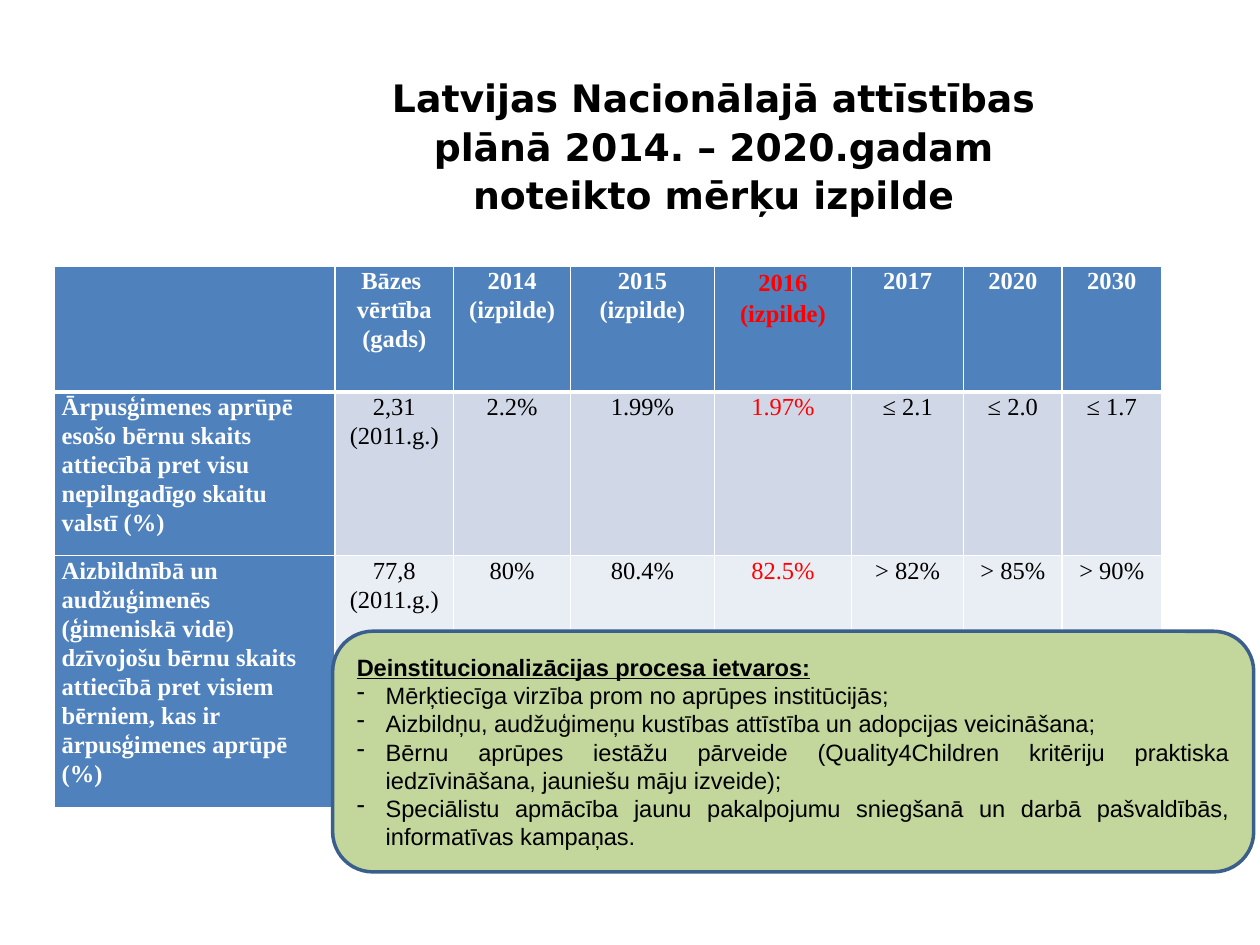
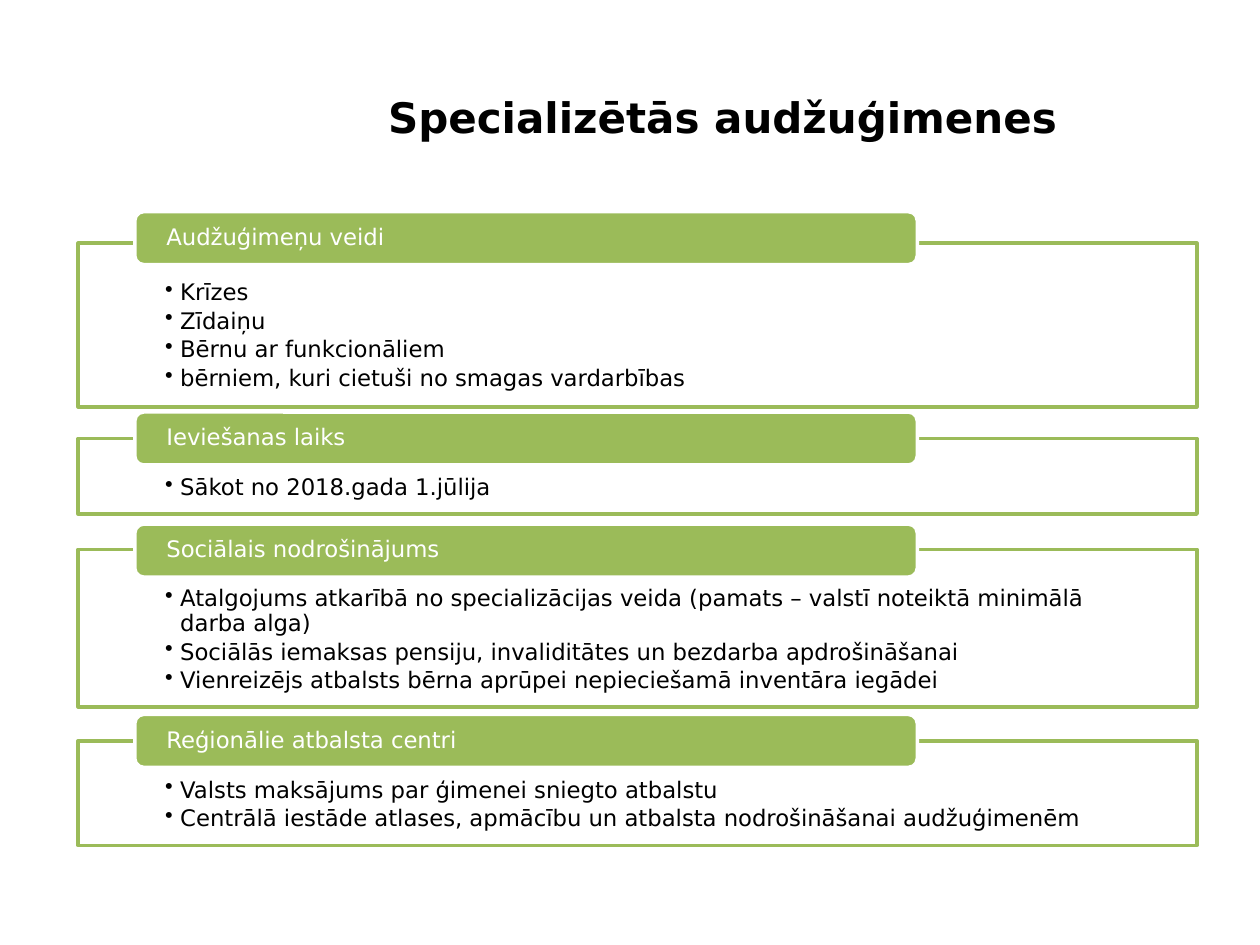
from lxml import etree
from pptx import Presentation
from pptx.dml.color import RGBColor
from pptx.enum.shapes import MSO_SHAPE
from pptx.enum.text import MSO_ANCHOR, PP_ALIGN
from pptx.oxml.ns import qn
from pptx.util import Inches, Pt

RECTANGLE, ROUNDED = MSO_SHAPE.RECTANGLE, MSO_SHAPE.ROUNDED_RECTANGLE
TOP, MIDDLE = MSO_ANCHOR.TOP, MSO_ANCHOR.MIDDLE
LEFT, CENTER, JUSTIFY = PP_ALIGN.LEFT, PP_ALIGN.CENTER, PP_ALIGN.JUSTIFY

BLACK = RGBColor(0x00, 0x00, 0x00)
WHITE = RGBColor(0xFF, 0xFF, 0xFF)
RED = RGBColor(0xFF, 0x00, 0x00)
BLUE = RGBColor(0x4F, 0x81, 0xBD)
DARK_BLUE = RGBColor(0x3A, 0x5F, 0x8C)
ROW_TINTS = [RGBColor(0xD0, 0xD8, 0xE8), RGBColor(0xE9, 0xED, 0xF4)]
GREEN = RGBColor(0x9B, 0xBB, 0x59)
PALE_GREEN = RGBColor(0xC3, 0xD6, 0x9B)

SANS, SERIF, ARIAL = "DejaVu Sans", "Times New Roman", "Arial"

COLUMN_WIDTHS = [2.23, 0.94, 0.93, 1.14, 1.09, 0.89, 0.78, 0.79]
ROW_HEIGHTS = [1, 1.3, 1.96]
CURRENT_YEAR_COLUMN = 4
TARGETS = [
    ["", "Bāzes \nvērtība\n(gads)", "2014 (izpilde)", "2015 (izpilde)",
     "2016\n(izpilde)", "2017", "2020", "2030"],
    ["Ārpusģimenes aprūpē esošo bērnu skaits attiecībā pret visu nepilngadīgo skaitu valstī (%)",
     "2,31\n(2011.g.)", "2.2%", "1.99%", "1.97%", "≤ 2.1", "≤ 2.0", "≤ 1.7"],
    ["Aizbildnībā un audžuģimenēs\n(ģimeniskā vidē) dzīvojošu bērnu skaits attiecībā pret "
     "visiem bērniem, kas ir ārpusģimenes aprūpē (%)",
     "77,8\n(2011.g.)", "80%", "80.4%", "82.5%", "> 82%", "> 85%", "> 90%"],
]

PROCESS_HEADING = "Deinstitucionalizācijas procesa ietvaros:"
PROCESS_STEPS = [
    "Mērķtiecīga virzība prom no aprūpes institūcijās;",
    "Aizbildņu, audžuģimeņu kustības attīstība un adopcijas veicināšana;",
    "Bērnu aprūpes iestāžu pārveide (Quality4Children kritēriju praktiska iedzīvināšana, "
    "jauniešu māju izveide);",
    "Speciālistu apmācība jaunu pakalpojumu sniegšanā un darbā pašvaldībās, "
    "informatīvas kampaņas.",
]

# Heading, heading top, frame top, frame height, items
SECTIONS = [
    ("Audžuģimeņu veidi", 1.68, 1.93, 1.3,
     ["Krīzes", "Zīdaiņu", "Bērnu ar funkcionāliem",
      "bērniem, kuri cietuši no smagas vardarbības"]),
    ("Ieviešanas laiks", 3.27, 3.48, 0.6, ["Sākot no 2018.gada 1.jūlija"]),
    ("Sociālais nodrošinājums", 4.16, 4.36, 1.25,
     ["Atalgojums atkarībā no specializācijas veida (pamats – valstī noteiktā minimālā "
      "darba alga)",
      "Sociālās iemaksas pensiju, invaliditātes un bezdarba apdrošināšanai",
      "Vienreizējs atbalsts bērna aprūpei nepieciešamā inventāra iegādei"]),
    ("Reģionālie atbalsta centri", 5.67, 5.88, 0.83,
     ["Valsts maksājums par ģimenei sniegto atbalstu",
      "Centrālā iestāde atlases, apmācību un atbalsta nodrošināšanai audžuģimenēm"]),
]


def add_bullet(para, mark, indent):
    properties = para._p.get_or_add_pPr()
    properties.set("marL", str(Inches(indent)))
    properties.set("indent", str(-Inches(indent)))
    etree.SubElement(properties, qn("a:buChar")).set("char", mark)


def write(frame, lines, font, size, color, align=LEFT, spacing=1.0, bold=False,
          bullet=None, after=0):
    """Fill a text frame, one paragraph a line; bullet is (mark, indent)."""
    for index, line in enumerate(lines):
        para = frame.paragraphs[0] if index == 0 else frame.add_paragraph()
        para.text = line
        if bullet:
            add_bullet(para, *bullet)
        para.alignment = align
        para.line_spacing = spacing
        para.space_after = Pt(after)
        para.font.name = font
        para.font.size = Pt(size)
        para.font.bold = bold
        para.font.color.rgb = color


def set_insets(frame, left, top, right, bottom):
    frame.margin_left, frame.margin_top = Inches(left), Inches(top)
    frame.margin_right, frame.margin_bottom = Inches(right), Inches(bottom)


def add_title(page, left, top, width, height, text, size, spacing=1.0):
    box = page.shapes.add_textbox(Inches(left), Inches(top), Inches(width), Inches(height))
    box.text_frame.word_wrap = True
    write(box.text_frame, [text], SANS, size, BLACK, CENTER, spacing, bold=True)


def add_panel(page, kind, left, top, width, height, fill, line, anchor):
    """Add a filled, outlined shape and return its text frame."""
    panel = page.shapes.add_shape(kind, Inches(left), Inches(top), Inches(width), Inches(height))
    panel.shadow.inherit = False
    panel.fill.solid()
    panel.fill.fore_color.rgb = fill
    panel.line.color.rgb = line
    panel.line.width = Pt(2)
    panel.text_frame.word_wrap = True
    panel.text_frame.vertical_anchor = anchor
    return panel.text_frame


def add_cell_borders(cell, bottom_width):
    properties = cell._tc.get_or_add_tcPr()
    for side, width in (("L", 1), ("R", 1), ("T", 1), ("B", bottom_width)):
        border = etree.SubElement(properties, qn(f"a:ln{side}"), w=str(Pt(width)))
        fill = etree.SubElement(border, qn("a:solidFill"))
        etree.SubElement(fill, qn("a:srgbClr"), val=str(WHITE))


def fill_cell(cell, text, row, column):
    is_header, is_label = row == 0, column == 0
    is_current = column == CURRENT_YEAR_COLUMN
    add_cell_borders(cell, 3 if is_header else 1)
    cell.fill.solid()
    cell.fill.fore_color.rgb = BLUE if is_header or is_label else ROW_TINTS[row - 1]
    side = 0 if is_current else 0.06
    set_insets(cell, side, 0, side, 0)
    color = RED if is_current else WHITE if is_header or is_label else BLACK
    write(cell.text_frame, text.split("\n"), SERIF, 14, color,
          LEFT if is_label else CENTER, 1.15 if is_header and is_current else 1.07,
          bold=is_header or is_label)


def add_target_table(page, left, top):
    table = page.shapes.add_table(
        len(ROW_HEIGHTS), len(COLUMN_WIDTHS), Inches(left), Inches(top),
        Inches(sum(COLUMN_WIDTHS)), Inches(sum(ROW_HEIGHTS))).table
    for column, width in zip(table.columns, COLUMN_WIDTHS):
        column.width = Inches(width)
    for row, height in zip(table.rows, ROW_HEIGHTS):
        row.height = Inches(height)
    for row, texts in enumerate(TARGETS):
        for column, text in enumerate(texts):
            fill_cell(table.cell(row, column), text, row, column)


def add_process_panel(page):
    frame = add_panel(page, ROUNDED, 2.64, 5.01, 7.31, 1.91, PALE_GREEN, DARK_BLUE, MIDDLE)
    write(frame, [PROCESS_HEADING], ARIAL, 13.5, BLACK, JUSTIFY, bold=True)
    frame.paragraphs[0].font.underline = True
    for step in PROCESS_STEPS:
        para = frame.add_paragraph()
        para.text = step
        add_bullet(para, "-", 0.23)
        para.alignment = JUSTIFY
        para.font.name = ARIAL
        para.font.size = Pt(13.5)
        para.font.color.rgb = BLACK


def add_section(page, heading, heading_top, frame_top, frame_height, items):
    """Add a framed list with a heading tab over its top edge."""
    body = add_panel(page, RECTANGLE, 0.62, frame_top, 8.88, frame_height, WHITE, GREEN, TOP)
    set_insets(body, 0.69, 0.3, 0.69, 0.1)
    write(body, items, SANS, 13, BLACK, spacing=0.9, bullet=("•", 0.12), after=2.3)
    tab = add_panel(page, ROUNDED, 1.07, heading_top, 6.21, 0.42, GREEN, WHITE, MIDDLE)
    set_insets(tab, 0.23, 0, 0.23, 0)
    write(tab, [heading], SANS, 13, WHITE, spacing=0.9)


def main():
    deck = Presentation()
    deck.slide_width, deck.slide_height = Inches(10), Inches(7.5)
    blank = deck.slide_layouts[6]

    page = deck.slides.add_slide(blank)
    add_title(page, 2.6, 0.52, 6.13, 0.85,
              "Latvijas Nacionālajā attīstības plānā 2014. – 2020.gadam noteikto mērķu izpilde",
              21.6, 1.07)
    add_target_table(page, 0.43, 2.11)
    add_process_panel(page)

    page = deck.slides.add_slide(blank)
    add_title(page, 2.4, 0.68, 6.67, 0.52, "Specializētās audžuģimenes", 24)
    for section in SECTIONS:
        add_section(page, *section)

    deck.save("out.pptx")


if __name__ == "__main__":
    main()
